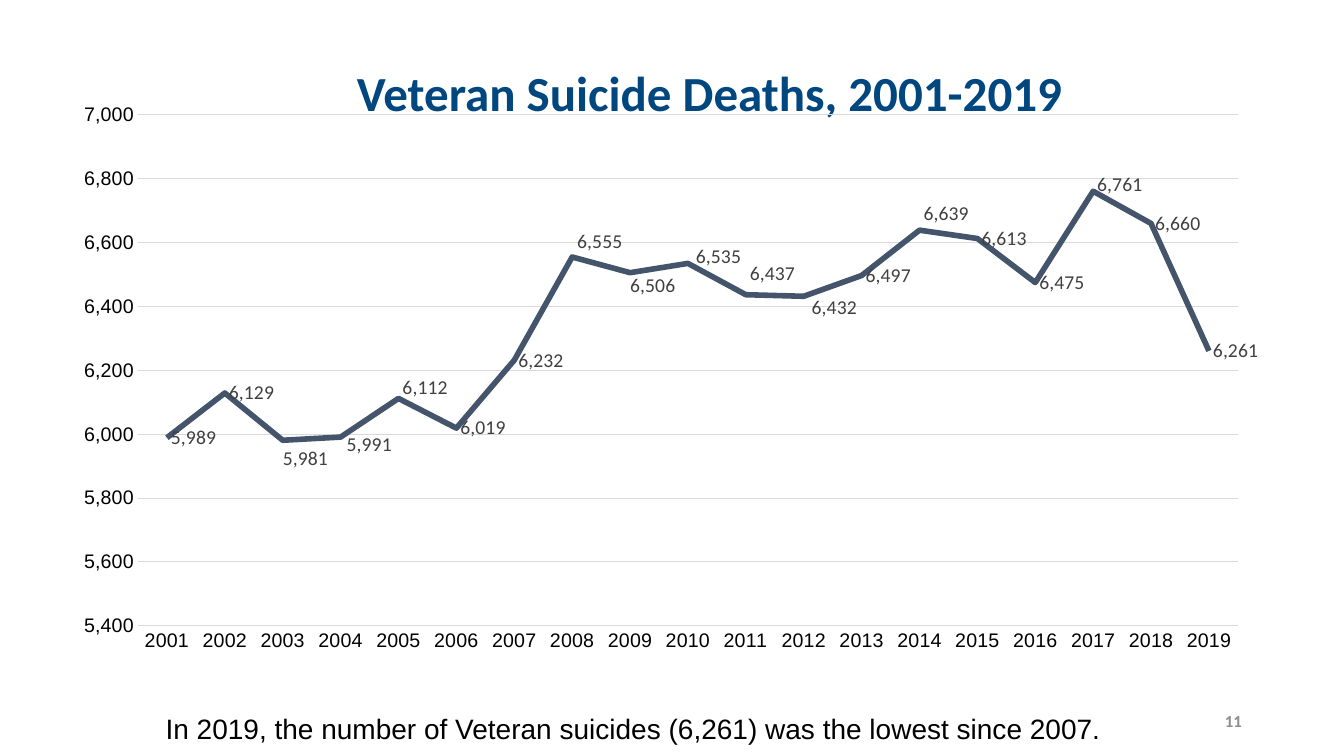
from dataclasses import dataclass

from lxml import etree
from pptx import Presentation
from pptx.chart.axis import CategoryAxis, ValueAxis
from pptx.chart.chart import Chart
from pptx.chart.data import CategoryChartData
from pptx.dml.color import RGBColor
from pptx.dml.line import LineFormat
from pptx.enum.chart import XL_CHART_TYPE, XL_LABEL_POSITION, XL_TICK_MARK
from pptx.enum.text import MSO_ANCHOR, MSO_AUTO_SIZE, PP_ALIGN
from pptx.oxml.ns import qn
from pptx.slide import Slide
from pptx.text.text import Font
from pptx.util import Emu, Pt

LEFT, CENTER, RIGHT = PP_ALIGN.LEFT, PP_ALIGN.CENTER, PP_ALIGN.RIGHT
TOP, MIDDLE = MSO_ANCHOR.TOP, MSO_ANCHOR.MIDDLE
LABEL_RIGHT = XL_LABEL_POSITION.RIGHT
NO_TICK = XL_TICK_MARK.NONE

BLACK = RGBColor(0x00, 0x00, 0x00)
NAVY = RGBColor(0x00, 0x46, 0x7F)
SLATE = RGBColor(0x44, 0x54, 0x6A)
DARK_GRAY = RGBColor(0x40, 0x40, 0x40)
PAGE_GRAY = RGBColor(0x8C, 0x8C, 0x8C)
GRID_GRAY = RGBColor(0xD9, 0xD9, 0xD9)

EMU_PER_INCH = 914400
PX_PER_INCH = 100.8
NUMBER_FORMAT = "###,###,###,##0"


@dataclass(frozen=True)
class Box:
    left: int
    top: int
    width: int
    height: int


@dataclass(frozen=True)
class TextItem:
    text: str
    box: Box
    size: int
    font: str
    color: RGBColor
    bold: bool = False
    align: PP_ALIGN = LEFT
    anchor: MSO_ANCHOR = TOP
    wrap: bool = True
    grow: bool = True
    space_after: int = 0


@dataclass(frozen=True)
class LabelShift:
    """Move of one year's label away from its usual place, in px."""
    year: int
    across: int
    down: int


SLIDE_WIDTH, SLIDE_HEIGHT = 1344, 756
CHART_BOX = Box(60, 93, 1203, 571)
PLOT_BOX = Box(138, 115, 1100, 511)
FIRST_YEAR = 2001
DEATHS = (5989, 6129, 5981, 5991, 6112, 6019, 6232, 6555, 6506, 6535,
          6437, 6432, 6497, 6639, 6613, 6475, 6761, 6660, 6261)
LABEL_SHIFTS = (
    LabelShift(2003, -4, 18),
    LabelShift(2004, 2, 8),
    LabelShift(2005, 0, -11),
    LabelShift(2008, 1, -15),
    LabelShift(2009, -4, 13),
    LabelShift(2010, 4, -7),
    LabelShift(2011, 0, -21),
    LabelShift(2012, 4, 11),
    LabelShift(2014, 0, -17),
    LabelShift(2017, 0, -7),
)
PAGE_NUMBER = TextItem("11", Box(950, 701, 302, 40), 12, "Calibri", PAGE_GRAY, bold=True,
                       align=RIGHT, anchor=MIDDLE, grow=False, space_after=6)
CAPTION = TextItem("In 2019, the number of Veteran suicides (6,261) was the lowest since 2007.",
                   Box(15, 707, 1237, 44), 20, "Arial", BLACK, align=CENTER)
TITLE = TextItem("Veteran Suicide Deaths, 2001-2019", Box(347, 58, 733, 70), 35,
                 "Calibri", NAVY, bold=True, wrap=False)


def px(length: int) -> Emu:
    return Emu(round(length * EMU_PER_INCH / PX_PER_INCH))


def place(box: Box) -> tuple[Emu, Emu, Emu, Emu]:
    return px(box.left), px(box.top), px(box.width), px(box.height)


def style_font(font: Font, name: str, size: int, color: RGBColor, bold: bool = False) -> None:
    font.name = name
    font.size = Pt(size)
    font.bold = bold
    font.color.rgb = color


def style_line(line: LineFormat, color: RGBColor, width: float) -> None:
    line.color.rgb = color
    line.width = Pt(width)


def add_text(slide: Slide, item: TextItem) -> None:
    frame = slide.shapes.add_textbox(*place(item.box)).text_frame
    frame.word_wrap = item.wrap
    frame.vertical_anchor = item.anchor
    frame.auto_size = MSO_AUTO_SIZE.SHAPE_TO_FIT_TEXT if item.grow else MSO_AUTO_SIZE.NONE
    paragraph = frame.paragraphs[0]
    paragraph.alignment = item.align
    paragraph.space_after = Pt(item.space_after)
    run = paragraph.add_run()
    run.text = item.text
    style_font(run.font, item.font, item.size, item.color, item.bold)


def make_layout(**settings: str | float) -> etree.ElementBase:
    """Build a c:layout element from the settings of a manual layout."""
    layout = etree.Element(qn("c:layout"))
    manual = etree.SubElement(layout, qn("c:manualLayout"))
    for name, value in settings.items():
        etree.SubElement(manual, qn(f"c:{name}")).set("val", str(value))
    return layout


def fix_plot_area(chart: Chart) -> None:
    plot_area = chart.element.find(".//" + qn("c:plotArea"))
    for layout in plot_area.findall(qn("c:layout")):
        plot_area.remove(layout)
    plot_area.insert(0, make_layout(
        layoutTarget="inner", xMode="edge", yMode="edge",
        x=(PLOT_BOX.left - CHART_BOX.left) / CHART_BOX.width,
        y=(PLOT_BOX.top - CHART_BOX.top) / CHART_BOX.height,
        w=PLOT_BOX.width / CHART_BOX.width,
        h=PLOT_BOX.height / CHART_BOX.height))


def style_axis(axis: CategoryAxis | ValueAxis) -> None:
    axis.major_tick_mark = NO_TICK
    axis.minor_tick_mark = NO_TICK
    style_font(axis.tick_labels.font, "Arial", 14, BLACK)


def add_labels(chart: Chart) -> None:
    series = chart.plots[0].series[0]
    labels = series.data_labels
    labels.show_value = True
    labels.position = LABEL_RIGHT
    style_font(labels.font, "Calibri", 14, DARK_GRAY)
    for shift in LABEL_SHIFTS:
        label = series.points[shift.year - FIRST_YEAR].data_label
        style_font(label.font, "Calibri", 14, DARK_GRAY)
        label.position = LABEL_RIGHT
    for shift, element in zip(LABEL_SHIFTS, chart.element.iter(qn("c:dLbl"))):
        element.insert(1, make_layout(x=shift.across / CHART_BOX.width,
                                      y=shift.down / CHART_BOX.height))


def add_deaths_chart(slide: Slide) -> None:
    data = CategoryChartData(number_format=NUMBER_FORMAT)
    data.categories = [str(FIRST_YEAR + index) for index in range(len(DEATHS))]
    data.add_series("Series 1", DEATHS)
    chart = slide.shapes.add_chart(XL_CHART_TYPE.LINE, *place(CHART_BOX), data).chart
    chart.has_legend = False
    chart.has_title = False
    style_font(chart.font, "Calibri", 10, BLACK)
    fix_plot_area(chart)

    style_axis(chart.category_axis)
    style_line(chart.category_axis.format.line, GRID_GRAY, 0.75)
    value_axis = chart.value_axis
    style_axis(value_axis)
    value_axis.minimum_scale, value_axis.maximum_scale = 5400, 7000
    value_axis.major_unit = 200
    value_axis.tick_labels.number_format = NUMBER_FORMAT
    value_axis.tick_labels.number_format_is_linked = False
    value_axis.format.line.fill.background()
    style_line(value_axis.major_gridlines.format.line, GRID_GRAY, 0.75)

    plot = chart.plots[0]
    plot.vary_by_categories = False
    series = plot.series[0]
    series.smooth = False
    style_line(series.format.line, SLATE, 4)
    add_labels(chart)


def main() -> None:
    presentation = Presentation()
    presentation.slide_width, presentation.slide_height = px(SLIDE_WIDTH), px(SLIDE_HEIGHT)
    slide = presentation.slides.add_slide(presentation.slide_layouts[6])
    for item in (PAGE_NUMBER, CAPTION, TITLE):
        add_text(slide, item)
    add_deaths_chart(slide)
    presentation.save("out.pptx")


if __name__ == "__main__":
    main()
